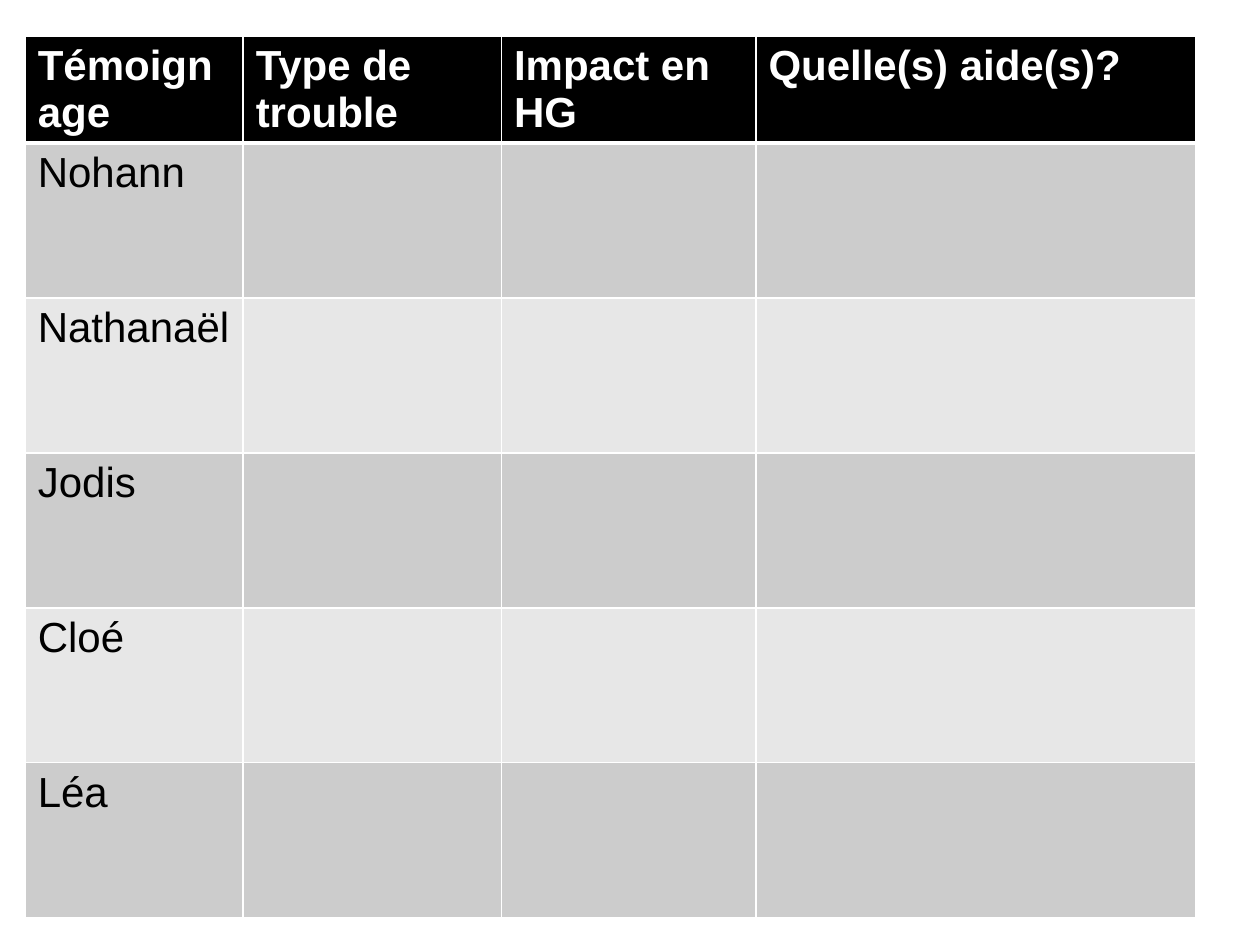
from lxml import etree
from pptx import Presentation
from pptx.dml.color import RGBColor
from pptx.oxml.ns import qn
from pptx.util import Inches, Pt

BLACK = RGBColor(0x00, 0x00, 0x00)
WHITE = RGBColor(0xFF, 0xFF, 0xFF)
DARK_BAND = RGBColor(0xCC, 0xCC, 0xCC)
LIGHT_BAND = RGBColor(0xE7, 0xE7, 0xE7)

HEADINGS = ["Témoignage", "Type de trouble", "Impact en HG", "Quelle(s) aide(s)?"]
WITNESSES = ["Nohann", "Nathanaël", "Jodis", "Cloé", "Léa"]
COLUMN_WIDTHS = [1.73, 2.05, 2.02, 3.49]
ROW_HEIGHTS = [0.71] + [1.23] * len(WITNESSES)


def set_borders(cell, widths):
    """Draw white left, right, top and bottom borders, widths in points."""
    properties = cell._tc.get_or_add_tcPr()
    for index, (side, width) in enumerate(zip("LRTB", widths)):
        line = etree.Element(qn(f"a:ln{side}"), w=str(Pt(width)))
        fill = etree.SubElement(line, qn("a:solidFill"))
        etree.SubElement(fill, qn("a:srgbClr"), val=str(WHITE))
        properties.insert(index, line)


prs = Presentation()
prs.slide_width, prs.slide_height = Inches(10), Inches(7.5)
slide = prs.slides.add_slide(prs.slide_layouts[6])

table = slide.shapes.add_table(
    len(ROW_HEIGHTS), len(COLUMN_WIDTHS), Inches(0.2), Inches(0.29),
    Inches(sum(COLUMN_WIDTHS)), Inches(sum(ROW_HEIGHTS))).table
for column, width in zip(table.columns, COLUMN_WIDTHS):
    column.width = Inches(width)
for row, height in zip(table.rows, ROW_HEIGHTS):
    row.height = Inches(height)

for column, heading in enumerate(HEADINGS):
    table.cell(0, column).text = heading
for row, witness in enumerate(WITNESSES, start=1):
    table.cell(row, 0).text = witness

for row_index, row in enumerate(table.rows):
    is_header = row_index == 0
    band = BLACK if is_header else DARK_BAND if row_index % 2 else LIGHT_BAND
    for cell in row.cells:
        cell.fill.solid()
        cell.fill.fore_color.rgb = band
        set_borders(cell, [1, 1, 3 if row_index == 1 else 1, 3 if is_header else 1])
        for run in cell.text_frame.paragraphs[0].runs:
            run.font.name = "Arial"
            run.font.size = Pt(24)
            run.font.bold = is_header
            run.font.color.rgb = WHITE if is_header else BLACK

prs.save("out.pptx")
